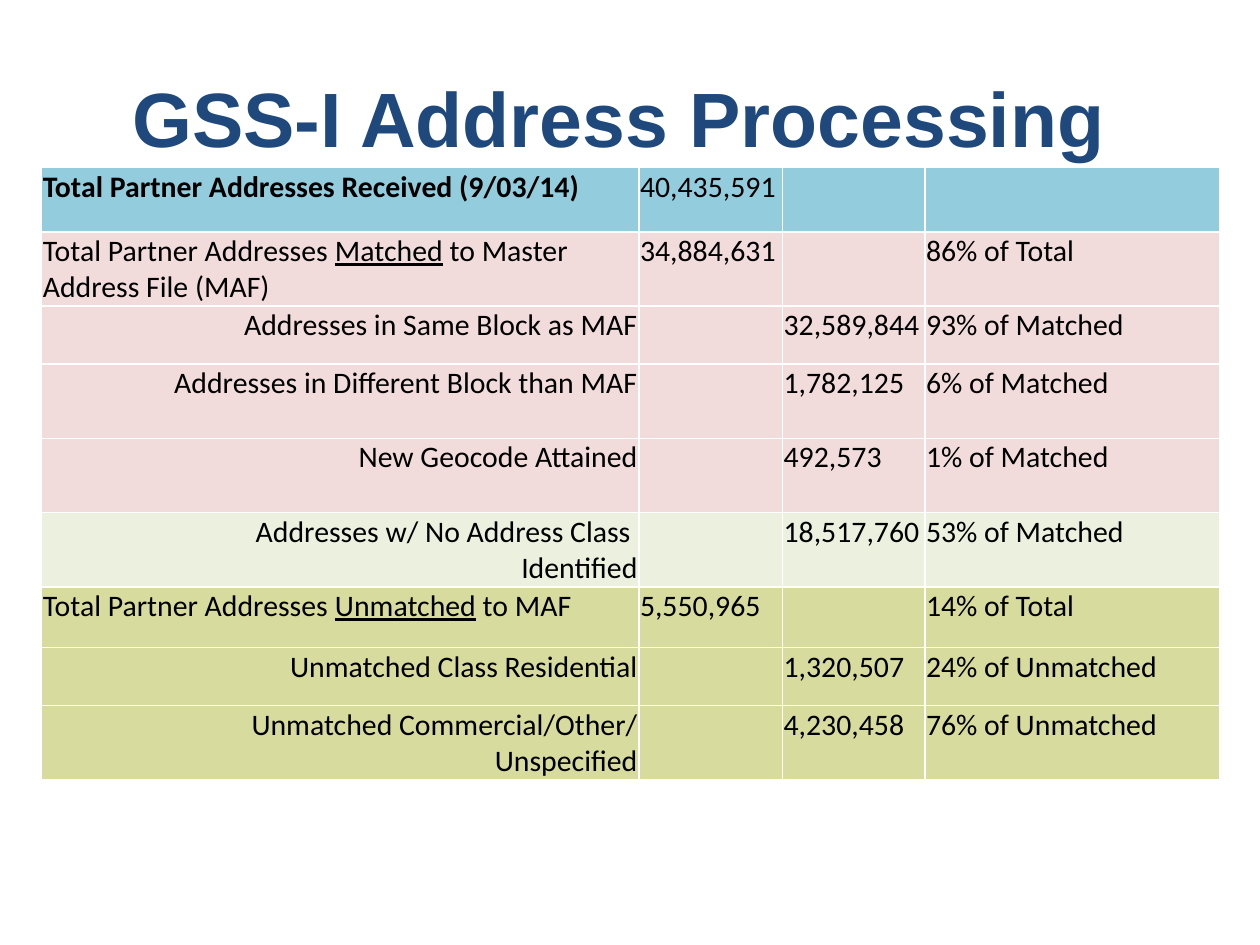
from lxml.etree import SubElement
from pptx import Presentation
from pptx.dml.color import RGBColor
from pptx.enum.text import MSO_ANCHOR as ANCHOR, PP_ALIGN as ALIGN
from pptx.oxml.ns import qn
from pptx.util import Inches, Pt

BLUE, PINK, PALE, OLIVE = "93CDDD", "F2DCDB", "EBF1DE", "D7DB9D"
TITLE = {"name": "Arial", "size": Pt(44), "bold": True}
BODY = {"name": "Calibri", "size": Pt(17), "bold": False}
INSETS = {"margin_left": 0.01, "margin_right": 0.01, "margin_top": 0.01, "margin_bottom": 0}
WIDTHS = [4.74, 1.14, 1.13, 2.34]
ROWS = [
    (0.51, BLUE, ["Total Partner Addresses Received (9/03/14)", "40,435,591", "", ""]),
    (0.59, PINK, ["Total Partner Addresses _Matched_ to Master Address File (MAF)",
                  "34,884,631", "", "86% of Total"]),
    (0.46, PINK, ["Addresses in Same Block as MAF", "", "32,589,844", "93% of Matched"]),
    (0.59, PINK, ["Addresses in Different Block than MAF", "", "1,782,125", "6% of Matched"]),
    (0.59, PINK, ["New Geocode Attained", "", "492,573", "1% of Matched"]),
    (0.59, PALE, ["Addresses w/ No Address Class \nIdentified", "", "18,517,760",
                  "53% of Matched"]),
    (0.48, OLIVE, ["Total Partner Addresses _Unmatched_ to MAF", "5,550,965", "",
                   "14% of Total"]),
    (0.46, OLIVE, ["Unmatched Class Residential", "", "1,320,507", "24% of Unmatched"]),
    (0.59, OLIVE, ["Unmatched Commercial/Other/\nUnspecified", "", "4,230,458",
                   "76% of Unmatched"]),
]


def color(value):
    return RGBColor.from_string(value)


class Deck:
    def __init__(self):
        self.prs = Presentation()
        self.prs.slide_width, self.prs.slide_height = Inches(10), Inches(7.5)
        self.s = self.prs.slides.add_slide(self.prs.slide_layouts[6])

    def text(self, tf, text, fmt, ink, align):
        for i, line in enumerate(text.split("\n")):
            p = tf.add_paragraph() if i else tf.paragraphs[0]
            p.alignment = align
            for j, part in enumerate(line.split("_")):
                r = p.add_run()
                r.text = part
                for key, value in fmt.items():
                    setattr(r.font, key, value)
                r.font.underline = j % 2 == 1
                r.font.color.rgb = color(ink)

    def title(self, text, x, y, w, h):
        tf = self.s.shapes.add_textbox(Inches(x), Inches(y), Inches(w), Inches(h)).text_frame
        tf.word_wrap = True
        tf.vertical_anchor = ANCHOR.MIDDLE
        self.text(tf, text, TITLE, "1F497D", ALIGN.CENTER)

    def border(self, cell, ink, width):
        tcPr = cell._tc.get_or_add_tcPr()
        for side in ("lnL", "lnR", "lnT", "lnB"):
            ln = SubElement(tcPr, qn(f"a:{side}"), w=str(Pt(width)))
            SubElement(SubElement(ln, qn("a:solidFill")), qn("a:srgbClr"), val=ink)

    def cell(self, cell, text, fill, fmt, align):
        self.border(cell, "FFFFFF", 1)
        cell.fill.solid()
        cell.fill.fore_color.rgb = color(fill)
        for key, value in INSETS.items():
            setattr(cell, key, Inches(value))
        if text:
            self.text(cell.text_frame, text, fmt, "000000", align)

    def table(self, x, y, widths, rows):
        height = sum(row[0] for row in rows)
        table = self.s.shapes.add_table(len(rows), len(widths), Inches(x), Inches(y),
                                        Inches(sum(widths)), Inches(height)).table
        table.first_row = table.horz_banding = False
        for column, width in zip(table.columns, widths):
            column.width = Inches(width)
        for i, (height, fill, texts) in enumerate(rows):
            table.rows[i].height = Inches(height)
            is_detail = not texts[1]
            for j, text in enumerate(texts):
                fmt = {**BODY, "bold": i == j == 0}
                align = ALIGN.RIGHT if is_detail and j == 0 else ALIGN.LEFT
                self.cell(table.cell(i, j), text, fill, fmt, align)


def main():
    deck = Deck()
    deck.title("GSS-I Address Processing ", 0.5, 0.3, 9, 1.25)
    deck.table(0.33, 1.33, WIDTHS, ROWS)
    deck.prs.save("out.pptx")


if __name__ == "__main__":
    main()
